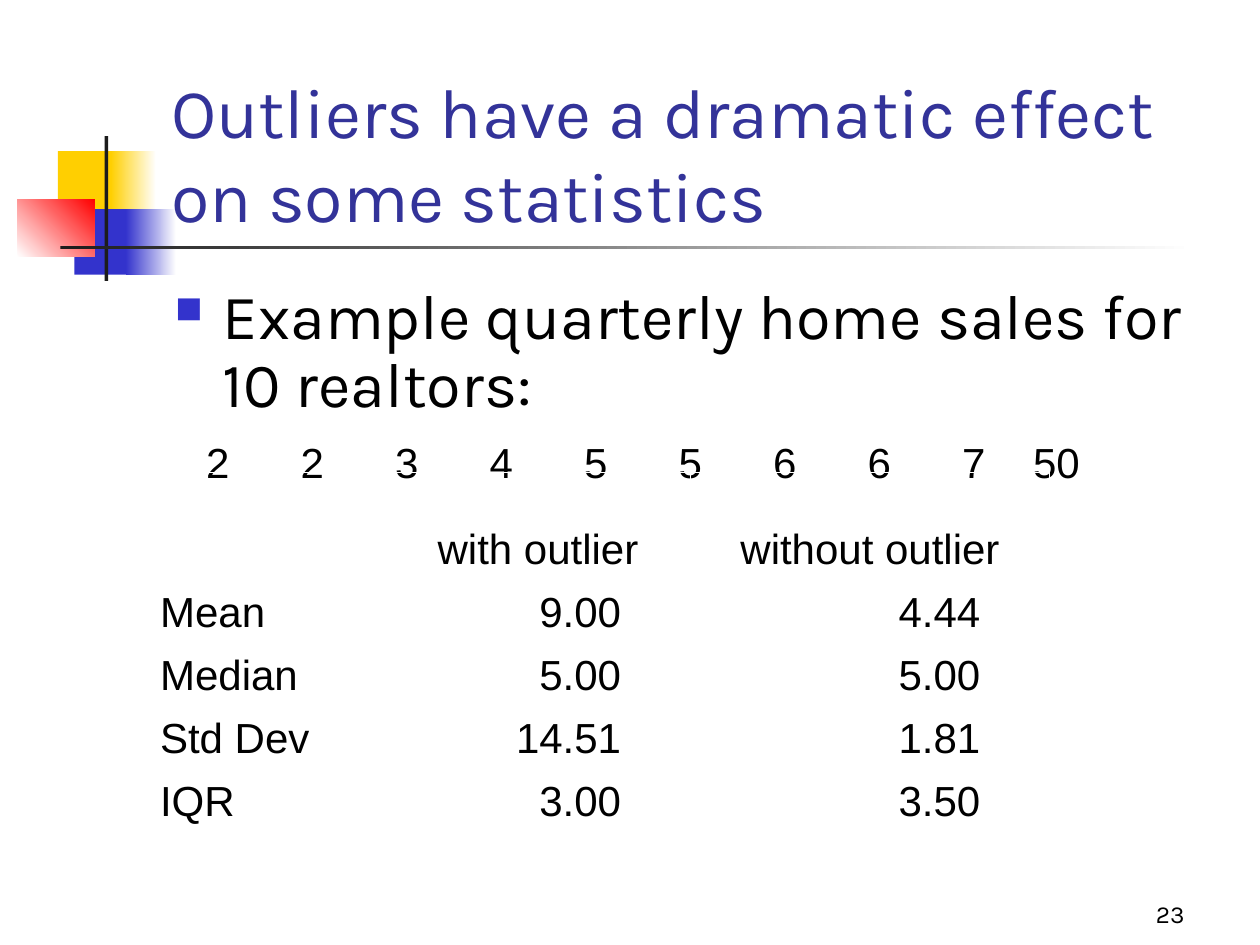
from lxml import etree
from pptx import Presentation
from pptx.dml.color import RGBColor
from pptx.enum.shapes import MSO_SHAPE as Shape
from pptx.enum.text import MSO_ANCHOR as Anchor, PP_ALIGN as Align
from pptx.oxml.ns import qn
from pptx.util import Inches, Pt

BLACK = RGBColor(0x00, 0x00, 0x00)
WHITE = RGBColor(0xFF, 0xFF, 0xFF)
CHARCOAL = RGBColor(0x1C, 0x1C, 0x1C)
NAVY = RGBColor(0x33, 0x33, 0x99)
BLUE = RGBColor(0x33, 0x33, 0xCC)
YELLOW = RGBColor(0xFF, 0xCF, 0x01)
RED = RGBColor(0xFF, 0x00, 0x00)


class SlideBuilder:
    text_font = "Karla"
    table_font = "Arial"
    table_size = 24

    def __init__(self, slide):
        self.slide = slide

    def block(self, left, top, width, height, start, end=None, angle=0):
        sp = self.slide.shapes.add_shape(
            Shape.RECTANGLE, Inches(left), Inches(top), Inches(width), Inches(height))
        sp.shadow.inherit = False
        sp.line.fill.background()
        if end is None:
            sp.fill.solid()
            sp.fill.fore_color.rgb = start
            return
        sp.fill.gradient()
        sp.fill.gradient_angle = angle
        for stop, color in zip(sp.fill.gradient_stops, (start, end)):
            stop.color.rgb = color

    def style(self, p, font, size, color, align):
        p.alignment = align
        for r in p.runs:
            r.font.name = font
            r.font.size = Pt(size)
            r.font.color.rgb = color

    def text(self, left, top, width, height, text, size, color=BLACK,
             align=Align.LEFT, anchor=Anchor.TOP):
        box = self.slide.shapes.add_textbox(
            Inches(left), Inches(top), Inches(width), Inches(height))
        tf = box.text_frame
        tf.word_wrap = True
        tf.vertical_anchor = anchor
        tf.text = text
        p = tf.paragraphs[0]
        self.style(p, self.text_font, size, color, align)
        return p

    def bullet(self, p, char, color, percent, indent):
        p.line_spacing = 0.9
        p.space_before = Pt(7.2)
        pPr = p._p.get_or_add_pPr()
        pPr.set("marL", str(Inches(indent)))
        pPr.set("indent", str(-Inches(indent)))
        buClr = etree.SubElement(pPr, qn("a:buClr"))
        etree.SubElement(buClr, qn("a:srgbClr"), val=str(color))
        etree.SubElement(pPr, qn("a:buSzPct"), val=str(percent * 1000))
        etree.SubElement(pPr, qn("a:buChar"), char=char)

    def table(self, left, top, widths, heights, rows, align_of, number_margin=0.1):
        frame = self.slide.shapes.add_table(
            len(rows), len(widths), Inches(left), Inches(top),
            Inches(sum(widths)), Inches(sum(heights)))
        table = frame.table
        table.first_row = False
        table.horz_banding = False
        for column, width in zip(table.columns, widths):
            column.width = Inches(width)
        for i, values in enumerate(rows):
            table.rows[i].height = Inches(heights[i])
            for j, value in enumerate(values):
                cell = table.cell(i, j)
                cell.fill.background()
                cell.vertical_anchor = Anchor.BOTTOM
                cell.text = value
                align = align_of(i, j)
                if align == Align.RIGHT:
                    cell.margin_right = Inches(number_margin)
                self.style(cell.text_frame.paragraphs[0], self.table_font,
                           self.table_size, BLACK, align)


def statistic_align(row, column):
    if column == 0:
        return Align.LEFT
    return Align.CENTER if row == 0 else Align.RIGHT


def main():
    prs = Presentation()
    prs.slide_width = Inches(10)
    prs.slide_height = Inches(7.5)
    s = SlideBuilder(prs.slides.add_slide(prs.slide_layouts[6]))

    s.block(0.46, 1.2, 0.48, 0.52, YELLOW)
    s.block(0.88, 1.2, 0.36, 0.52, YELLOW, WHITE)
    s.block(0.59, 1.66, 0.46, 0.52, BLUE)
    s.block(1, 1.66, 0.4, 0.52, BLUE, WHITE)
    s.block(0.14, 1.58, 0.61, 0.46, WHITE, RED, 45)
    s.block(0.83, 1.08, 0.03, 1.15, CHARCOAL)
    s.block(0.48, 1.95, 9, 0.03, CHARCOAL, WHITE)

    s.text(7.42, 6.92, 2.08, 0.5, "23", 14, align=Align.RIGHT, anchor=Anchor.BOTTOM)
    s.text(1.26, 0.68, 8.52, 1.25, "Outliers have a dramatic effect on some statistics",
           40, NAVY, anchor=Anchor.BOTTOM)
    p = s.text(1.29, 2.21, 8.21, 1.29, "Example quarterly home sales for 10 realtors:", 36)
    s.bullet(p, "■", BLUE, 60, 0.38)

    sales = ["2", "2", "3", "4", "5", "5", "6", "6", "7", "50"]
    s.table(1.17, 3.25, [0.75] * len(sales), [0.67], [sales],
            lambda row, column: Align.RIGHT)

    statistics = [
        ["", "with outlier", "without outlier"],
        ["Mean", "9.00", "4.44"],
        ["Median", "5.00", "5.00"],
        ["Std Dev", "14.51", "1.81"],
        ["IQR", "3.00", "3.50"],
    ]
    s.table(1.17, 3.75, [1.89, 2.42, 2.85], [0.85] + [0.4] * 4, statistics,
            statistic_align, number_margin=0.55)

    prs.save("out.pptx")


if __name__ == "__main__":
    main()
